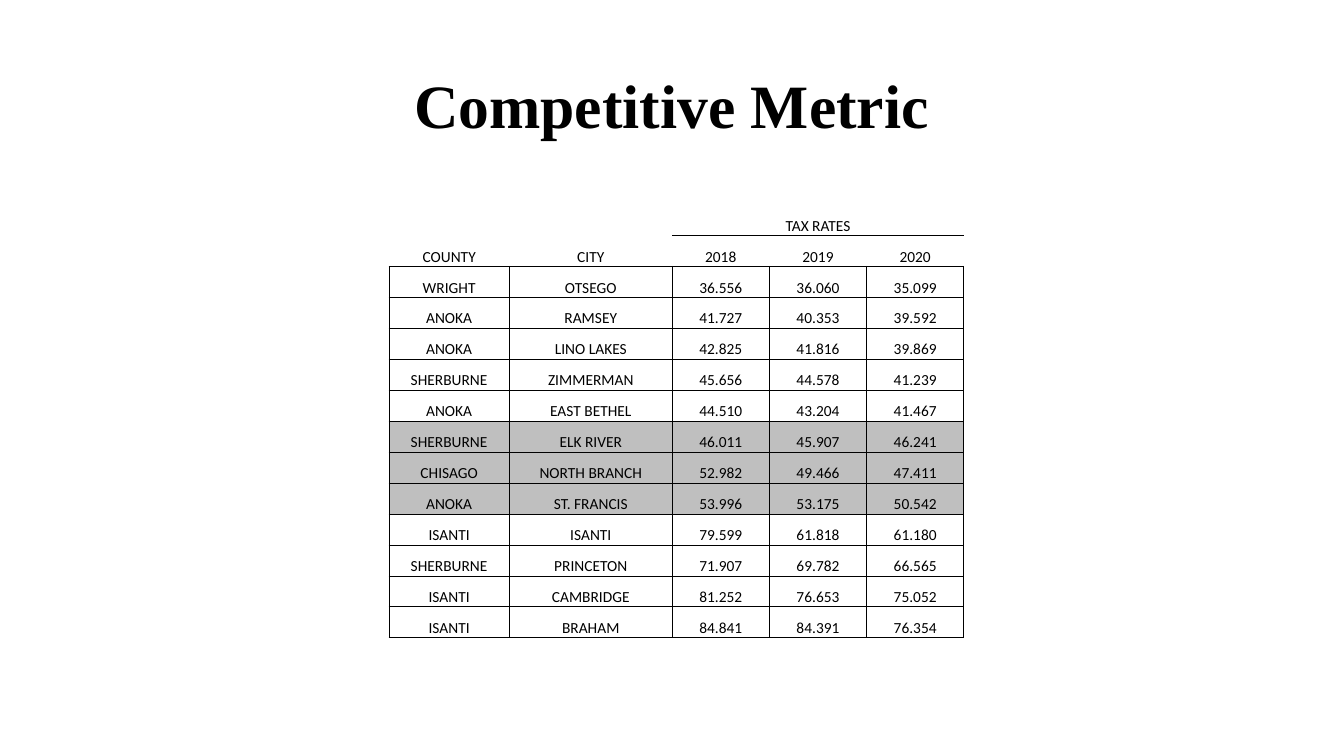
from lxml import etree
from pptx import Presentation
from pptx.dml.color import RGBColor
from pptx.enum.text import MSO_ANCHOR, PP_ALIGN
from pptx.oxml.ns import qn
from pptx.util import Cm, Pt

BLACK = RGBColor(0x00, 0x00, 0x00)
GRAY = RGBColor(0xBF, 0xBF, 0xBF)
CENTER = PP_ALIGN.CENTER
BOTTOM = MSO_ANCHOR.BOTTOM

TITLE = {"name": "Times New Roman", "size": Pt(44), "bold": True}
BODY = {"name": "Calibri", "size": Pt(11), "bold": False}
INSET = {"margin_left": Cm(0.02), "margin_right": Cm(0.02),
         "margin_top": Cm(0.02), "margin_bottom": 0,
         "vertical_anchor": BOTTOM}
PLAIN = {"first_row": False, "horz_banding": False}

WIDTHS = [3.04, 4.1, 2.45, 2.45, 2.45]
HEIGHT = 10.92
RATES = [
    ["", "", "TAX RATES", "", ""],
    ["COUNTY", "CITY", "2018", "2019", "2020"],
    ["WRIGHT", "OTSEGO", "36.556", "36.060", "35.099"],
    ["ANOKA", "RAMSEY", "41.727", "40.353", "39.592"],
    ["ANOKA", "LINO LAKES", "42.825", "41.816", "39.869"],
    ["SHERBURNE", "ZIMMERMAN", "45.656", "44.578", "41.239"],
    ["ANOKA", "EAST BETHEL", "44.510", "43.204", "41.467"],
    ["SHERBURNE", "ELK RIVER", "46.011", "45.907", "46.241"],
    ["CHISAGO", "NORTH BRANCH", "52.982", "49.466", "47.411"],
    ["ANOKA", "ST. FRANCIS", "53.996", "53.175", "50.542"],
    ["ISANTI", "ISANTI", "79.599", "61.818", "61.180"],
    ["SHERBURNE", "PRINCETON", "71.907", "69.782", "66.565"],
    ["ISANTI", "CAMBRIDGE", "81.252", "76.653", "75.052"],
    ["ISANTI", "BRAHAM", "84.841", "84.391", "76.354"],
]
SHADED = {"ELK RIVER", "NORTH BRANCH", "ST. FRANCIS"}


def apply(target, values):
    for key, value in values.items():
        setattr(target, key, value)


def edges(row, col):
    """Sides of a cell that carry a line."""
    if row > 1:
        return "LRTB"
    if row == 1:
        return "TB" if col > 1 else "B"
    return "B" if col > 1 else ""


class Deck:
    def __init__(self):
        self.show = Presentation()
        self.show.slide_width = Cm(33.87)
        self.show.slide_height = Cm(19.05)
        self.slide = self.show.slides.add_slide(self.show.slide_layouts[5])

    def label(self, para, text, style):
        para.alignment = CENTER
        if text:
            run = para.add_run()
            run.text = text
            apply(run.font, style)
            run.font.color.rgb = BLACK
        else:
            end = etree.SubElement(para._p, qn("a:endParaRPr"))
            end.set("sz", str(int(style["size"].pt * 100)))

    def title(self, text, left, top, width, height):
        box = self.slide.shapes.title
        apply(box, {"left": Cm(left), "top": Cm(top),
                    "width": Cm(width), "height": Cm(height)})
        box.text_frame.vertical_anchor = BOTTOM
        para = box.text_frame.paragraphs[0]
        para.line_spacing = 0.9
        self.label(para, text, TITLE)

    def border(self, cell, sides):
        props = cell._tc.get_or_add_tcPr()
        for side in "LRTB":
            line = etree.SubElement(props, qn(f"a:ln{side}"), w=str(Pt(0.5)))
            if side in sides:
                fill = etree.SubElement(line, qn("a:solidFill"))
                etree.SubElement(fill, qn("a:srgbClr"), val=str(BLACK))
            else:
                etree.SubElement(line, qn("a:noFill"))

    def table(self, rows, widths, left, top, height):
        grid = self.slide.shapes.add_table(
            len(rows), len(widths), Cm(left), Cm(top),
            Cm(sum(widths)), Cm(height)).table
        apply(grid, PLAIN)
        for column, width in zip(grid.columns, widths):
            column.width = Cm(width)
        for r, row in enumerate(rows):
            for c, text in enumerate(row):
                cell = grid.cell(r, c)
                apply(cell, INSET)
                self.label(cell.text_frame.paragraphs[0], text, BODY)
                self.border(cell, edges(r, c))
                if row[1] in SHADED:
                    cell.fill.solid()
                    cell.fill.fore_color.rgb = GRAY
                else:
                    cell.fill.background()
        grid.cell(0, 2).merge(grid.cell(0, 4))


def main():
    deck = Deck()
    deck.title("Competitive Metric", 4.23, 0.85, 25.4, 2.86)
    deck.table(RATES, WIDTHS, 9.8, 5.15, HEIGHT)
    deck.show.save("out.pptx")


if __name__ == "__main__":
    main()
